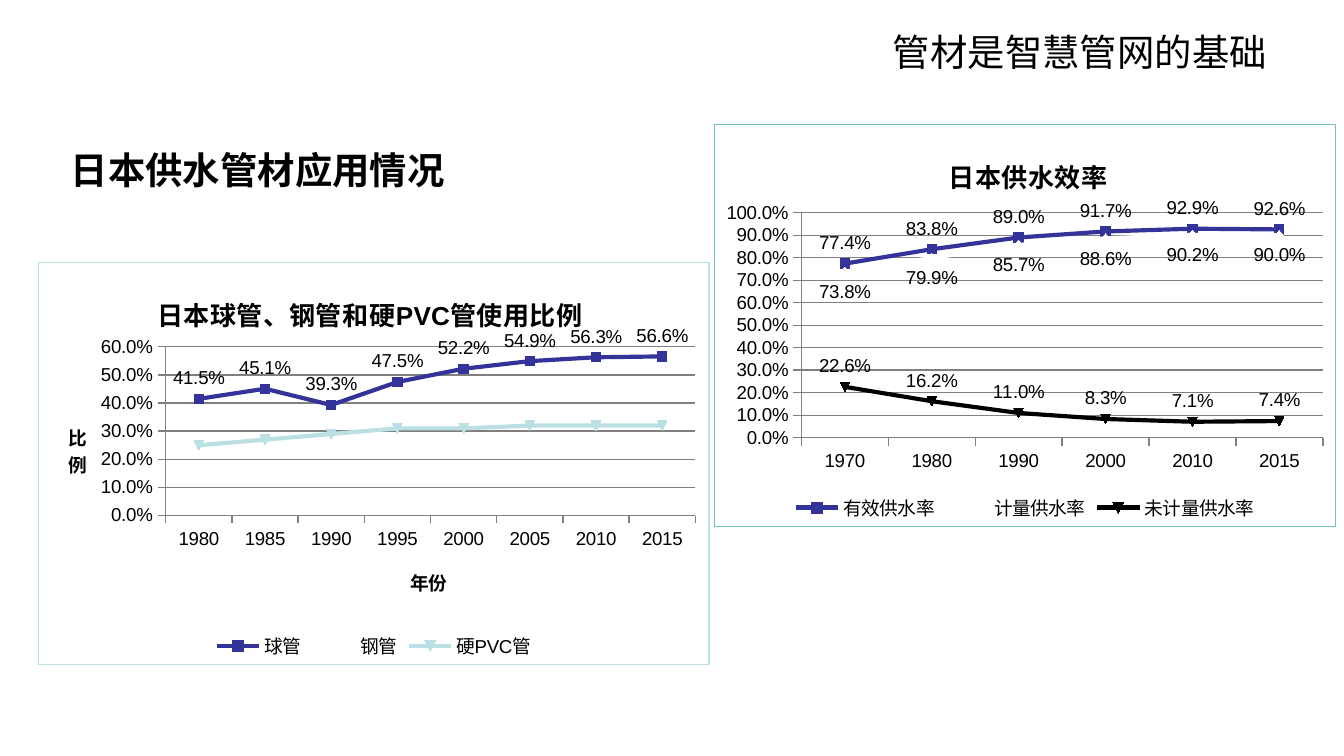
from dataclasses import dataclass
from typing import Optional

from lxml.etree import SubElement
from pptx import Presentation
from pptx.chart.data import CategoryChartData
from pptx.dml.color import RGBColor
from pptx.enum.chart import XL_CHART_TYPE as ChartType
from pptx.enum.chart import XL_LABEL_POSITION as LabelPos
from pptx.enum.chart import XL_LEGEND_POSITION as LegendPos
from pptx.enum.chart import XL_TICK_MARK as Tick
from pptx.enum.text import MSO_ANCHOR as Anchor
from pptx.enum.text import PP_ALIGN as Align
from pptx.oxml import parse_xml
from pptx.oxml.ns import nsdecls, qn
from pptx.util import Cm, Pt

BLACK = RGBColor(0x00, 0x00, 0x00)
WHITE = RGBColor(0xFF, 0xFF, 0xFF)
GRAY = RGBColor(0x80, 0x80, 0x80)
NAVY = RGBColor(0x33, 0x33, 0x99)
PALE_TEAL = RGBColor(0xBB, 0xE0, 0xE3)
TEAL = RGBColor(0x72, 0xBF, 0xC5)
LATIN = "Arial"
CJK = "Noto Sans CJK SC"
PERCENT = "0.0%"


@dataclass
class Series:
    name: str
    values: list[float]
    color: RGBColor
    labels: Optional[LabelPos] = None


@dataclass
class AxisTitle:
    text: str
    x: float
    y: float
    stacked: bool = False


@dataclass
class LineChart:
    title: str
    title_xy: tuple[float, float]
    box: tuple[float, float, float, float]
    plot: tuple[float, float, float, float]
    maximum: float
    border: RGBColor
    years: list[str]
    series: list[Series]
    category_title: Optional[AxisTitle] = None
    value_title: Optional[AxisTitle] = None


def set_layout(parent, index: int, inner: bool = False, **fractions: float) -> None:
    for old in parent.findall(qn("c:layout")):
        parent.remove(old)
    layout = parse_xml(f"<c:layout {nsdecls('c')}/>")
    manual = SubElement(layout, qn("c:manualLayout"))
    if inner:
        SubElement(manual, qn("c:layoutTarget")).set("val", "inner")
    for key in ("x", "y"):
        SubElement(manual, qn(f"c:{key}Mode")).set("val", "edge")
    for key, value in fractions.items():
        SubElement(manual, qn(f"c:{key}")).set("val", str(value))
    parent.insert(index, layout)


def write_paragraph(tf, text: str, size: int, bold: bool, font_name: str = LATIN):
    p = tf.paragraphs[0]
    p.text = text
    p.font.size = Pt(size)
    p.font.bold = bold
    p.font.name = font_name
    p.font.color.rgb = BLACK
    return p


def add_axis_title(axis, title: AxisTitle) -> None:
    tf = axis.axis_title.text_frame
    write_paragraph(tf, title.text, 10, True)
    if title.stacked:
        body = axis.axis_title._element.find(".//" + qn("a:bodyPr"))
        body.set("rot", "0")
        body.set("vert", "wordArtVert")
    set_layout(axis.axis_title._element, 1, x=title.x, y=title.y)


def style_axes(chart, c: LineChart) -> None:
    for axis, title in ((chart.category_axis, c.category_title),
                        (chart.value_axis, c.value_title)):
        axis.major_tick_mark = Tick.OUTSIDE
        axis.minor_tick_mark = Tick.NONE
        axis.format.line.color.rgb = GRAY
        if title:
            add_axis_title(axis, title)
    values = chart.value_axis
    values.minimum_scale, values.maximum_scale, values.major_unit = 0, c.maximum, 0.1
    values.tick_labels.number_format = PERCENT
    values.tick_labels.number_format_is_linked = False
    values.major_gridlines.format.line.color.rgb = GRAY


def add_border(chart, color: RGBColor) -> None:
    sp_pr = parse_xml(
        f'<c:spPr {nsdecls("c", "a")}><a:noFill/><a:ln w="{Pt(0.75)}">'
        f'<a:solidFill><a:srgbClr val="{color}"/></a:solidFill></a:ln></c:spPr>')
    chart._chartSpace.find(qn("c:chart")).addnext(sp_pr)


def add_line_chart(s, c: LineChart) -> None:
    data = CategoryChartData(number_format=PERCENT)
    data.categories = c.years
    for item in c.series:
        data.add_series(item.name, item.values)
    chart = s.shapes.add_chart(ChartType.LINE_MARKERS, *map(Cm, c.box), data).chart
    chart.font.size = Pt(10)
    chart.font.name = LATIN
    chart.font.color.rgb = BLACK
    chart.has_title = True
    write_paragraph(chart.chart_title.text_frame, c.title, 14, True)
    set_layout(chart.chart_title._element, 1, x=c.title_xy[0], y=c.title_xy[1])
    chart.has_legend = True
    chart.legend.position = LegendPos.BOTTOM
    chart.legend.include_in_layout = False
    style_axes(chart, c)
    plot = chart.plots[0]
    plot.vary_by_categories = False
    for line, item in zip(plot.series, c.series):
        line.smooth = False
        line.format.line.color.rgb = item.color
        line.format.line.width = Pt(2.25)
        if item.labels is not None:
            labels = line.data_labels
            labels.show_value = True
            labels.number_format = PERCENT
            labels.number_format_is_linked = False
            labels.position = item.labels
    set_layout(chart._chartSpace.find(".//" + qn("c:plotArea")), 0, True,
               **dict(zip("xywh", c.plot)))
    add_border(chart, c.border)


def add_heading(sp, text: str, box: tuple[float, float, float, float],
                bold: bool, align: Align, wrap: bool, spacing: float) -> None:
    sp.left, sp.top, sp.width, sp.height = map(Cm, box)
    tf = sp.text_frame
    tf.word_wrap = wrap
    tf.vertical_anchor = Anchor.MIDDLE
    p = write_paragraph(tf, text, 20, bold, CJK)
    p.alignment = align
    p.line_spacing = spacing


PIPES = LineChart(
    "日本球管、钢管和硬PVC管使用比例", (0.17, 0.06), (0.71, 4.95, 12.7, 7.62),
    (0.19, 0.21, 0.79, 0.42), 0.6, PALE_TEAL,
    ["1980", "1985", "1990", "1995", "2000", "2005", "2010", "2015"],
    [Series("球管", [0.415, 0.451, 0.393, 0.475, 0.522, 0.549, 0.563, 0.566],
            NAVY, LabelPos.ABOVE),
     Series("钢管", [0.04, 0.04, 0.04, 0.04, 0.03, 0.03, 0.03, 0.03], WHITE),
     Series("硬PVC管", [0.25, 0.27, 0.29, 0.31, 0.31, 0.32, 0.32, 0.32], PALE_TEAL)],
    AxisTitle("年份", 0.55, 0.75), AxisTitle("比例", 0.04, 0.39, True))

EFFICIENCY = LineChart(
    "日本供水效率", (0.37, 0.06), (13.49, 2.34, 11.76, 7.62),
    (0.14, 0.22, 0.84, 0.56), 1, TEAL,
    ["1970", "1980", "1990", "2000", "2010", "2015"],
    [Series("有效供水率", [0.774, 0.838, 0.89, 0.917, 0.929, 0.926], NAVY, LabelPos.ABOVE),
     Series("计量供水率", [0.738, 0.799, 0.857, 0.886, 0.902, 0.9], WHITE, LabelPos.BELOW),
     Series("未计量供水率", [0.226, 0.162, 0.11, 0.083, 0.071, 0.074], BLACK, LabelPos.ABOVE)])


def main() -> None:
    prs = Presentation()
    prs.slide_width, prs.slide_height = Cm(25.4), Cm(14.29)
    s = prs.slides.add_slide(prs.slide_layouts[5])
    for chart in (PIPES, EFFICIENCY):
        add_line_chart(s, chart)
    add_heading(s.shapes.title, "管材是智慧管网的基础", (16.31, 0.41, 8.2, 1.12),
                False, Align.CENTER, True, 1)
    box = (1.09, 2.31, 7.67, 1.35)
    add_heading(s.shapes.add_textbox(*map(Cm, box)), "日本供水管材应用情况", box,
                True, Align.LEFT, False, 1.5)
    prs.save("out.pptx")


if __name__ == "__main__":
    main()
